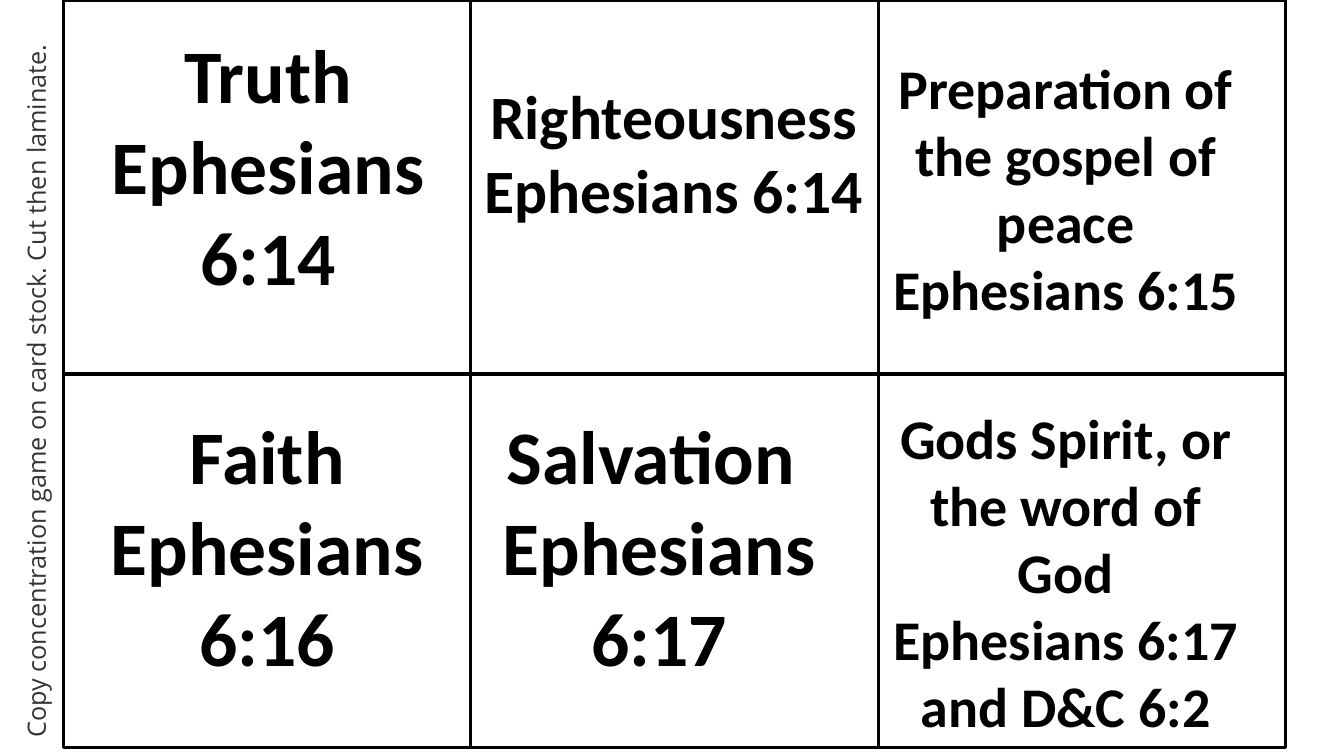
"""Build a slide of six scripture cards for a concentration game."""
from lxml import etree
from pptx import Presentation
from pptx.dml.color import RGBColor
from pptx.enum.shapes import MSO_SHAPE
from pptx.enum.text import MSO_AUTO_SIZE, PP_ALIGN
from pptx.oxml import parse_xml
from pptx.oxml.ns import nsdecls
from pptx.util import Pt

PX = 9144
BLACK = RGBColor(0x00, 0x00, 0x00)
WHITE = RGBColor(0xFF, 0xFF, 0xFF)
GREY = RGBColor(0x33, 0x33, 0x33)
CARD_LEFT, CARD_WIDTH, CARD_HEIGHT = 63, 404, 371

deck = Presentation()
deck.slide_width, deck.slide_height = 1333 * PX, 750 * PX
slide = deck.slides.add_slide(deck.slide_layouts[6])


def add_text(text, left, top, width, height, size, font="Calibri", color=BLACK,
             bold=True, align=PP_ALIGN.CENTER, outline=WHITE, rotation=0):
    """Add a text box with one paragraph for each line of text."""
    box = slide.shapes.add_textbox(left * PX, top * PX, width * PX, height * PX)
    box.rotation = rotation
    frame = box.text_frame
    frame.word_wrap = True
    frame.auto_size = MSO_AUTO_SIZE.SHAPE_TO_FIT_TEXT
    frame.text = text
    for paragraph in frame.paragraphs:
        paragraph.alignment = align
        run = paragraph.runs[0]
        run.font.name = font
        run.font.size = Pt(size)
        run.font.bold = bold
        run.font.color.rgb = color
        if outline is not None:
            run.font._element.insert(0, parse_xml(
                f'<a:ln {nsdecls("a")} w="{Pt(0.75)}"><a:solidFill>'
                f'<a:srgbClr val="{outline}"/></a:solidFill></a:ln>'))


for column in range(3):
    for row in range(2):
        card = slide.shapes.add_shape(
            MSO_SHAPE.RECTANGLE, (CARD_LEFT + column * CARD_WIDTH) * PX,
            row * CARD_HEIGHT * PX, CARD_WIDTH * PX, CARD_HEIGHT * PX)
        card.shadow.inherit = False
        card.fill.solid()
        card.fill.fore_color.rgb = WHITE
        card.line.color.rgb = BLACK
        card.line.width = Pt(2.25)

verses = [
    ("Truth\nEphesians 6:14", 79, 23, 374, 283, 54),
    ("Righteousness\nEphesians 6:14", 460, 72, 417, 158, 44),
    ("Preparation of the gospel of peace\nEphesians 6:15", 870, 48, 374, 279, 40),
    ("Faith\nEphesians 6:16", 78, 401, 374, 283, 54),
    ("Salvation \nEphesians 6:17", 467, 401, 374, 283, 54),
    ("Gods Spirit, or the word of God\nEphesians 6:17 and D&C 6:2",
     870, 395, 374, 347, 40),
]
for verse in verses:
    add_text(*verse)

add_text("Copy concentration game on card stock. Cut then laminate.",
         -320, 335, 742, 71, 18, font="Open Sans", color=GREY, bold=False,
         align=PP_ALIGN.LEFT, outline=None, rotation=270)

deck.save("out.pptx")
